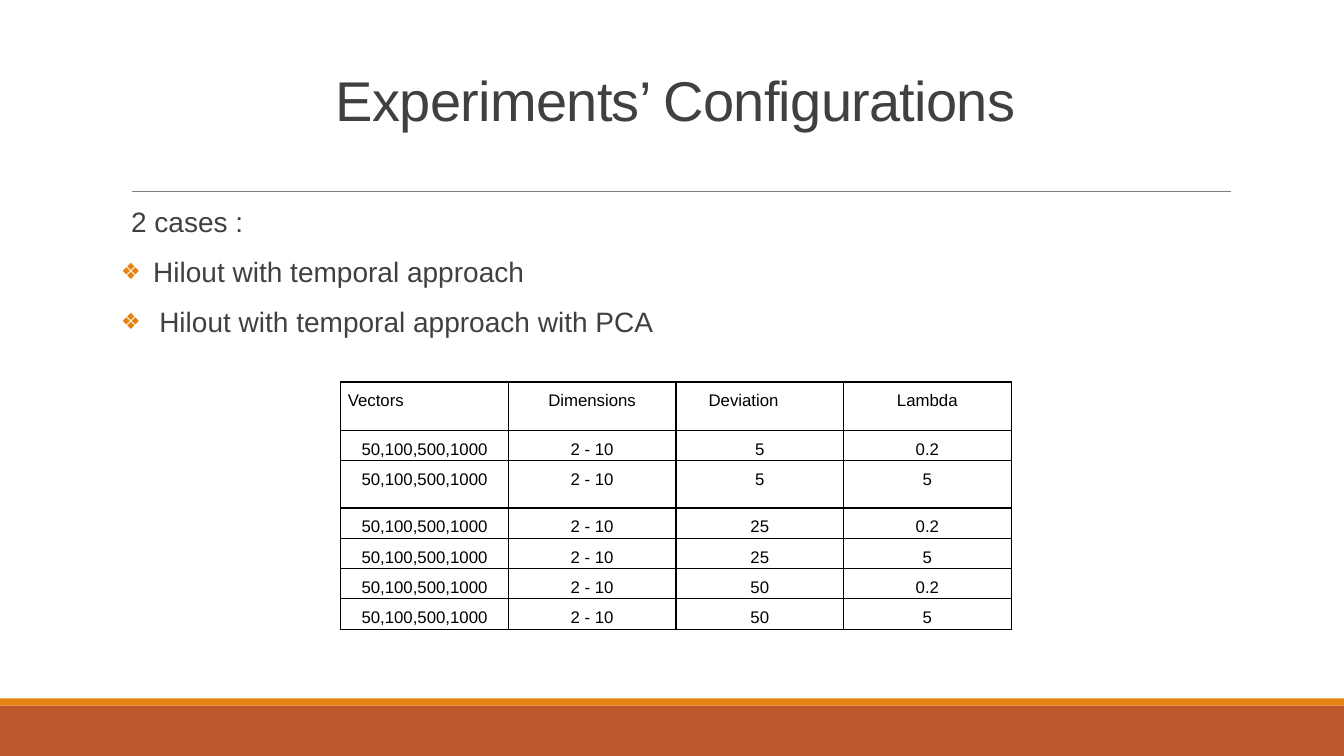
import pptx
import pptx.util
import pptx.dml.color
import pptx.enum.shapes
import pptx.enum.text
import pptx.oxml.ns
from lxml import etree

Inches = pptx.util.Inches
Pt = pptx.util.Pt
ALIGN = pptx.enum.text.PP_ALIGN

HEADS = ["Vectors", "Dimensions", "Deviation", "Lambda"]
CASES = [(dev, lam) for dev in ("5", "25", "50") for lam in ("0.2", "5")]
ROWS = [HEADS] + [["50,100,500,1000", "2 - 10", *case] for case in CASES]
HEIGHTS = [0.48, 0.23, 0.47, 0.23, 0.23, 0.23, 0.23]


def color(code):
    return pptx.dml.color.RGBColor.from_string(code)


def add_node(parent, tag, **attrs):
    node = etree.SubElement(parent, pptx.oxml.ns.qn(tag))
    for name, value in attrs.items():
        node.set(name, value)
    return node


def add_band(slide, top, height, fill):
    band = slide.shapes.add_shape(
        pptx.enum.shapes.MSO_SHAPE.RECTANGLE,
        0, Inches(top), Inches(13.33), Inches(height))
    band.shadow.inherit = False
    band.fill.solid()
    band.fill.fore_color.rgb = color(fill)
    band.line.fill.background()


def add_rule(slide, left, right, top):
    rule = slide.shapes.add_connector(
        pptx.enum.shapes.MSO_CONNECTOR.STRAIGHT,
        Inches(left), Inches(top), Inches(right), Inches(top))
    rule.line.color.rgb = color("808080")
    rule.line.width = Pt(0.5)
    add_node(rule._element.spPr, "a:effectLst")


def add_frame(slide, top, height):
    box = slide.shapes.add_textbox(
        Inches(1.2), Inches(top), Inches(11), Inches(height))
    box.text_frame.word_wrap = True
    return box.text_frame


def style_text(para, size, fill, spacing):
    para.line_spacing = spacing
    for run in para.runs:
        run.font.name = "Arial"
        run.font.size = Pt(size)
        run.font.color.rgb = color(fill)


def add_title(slide, text):
    frame = add_frame(slide, 0.31, 1.06)
    frame.vertical_anchor = pptx.enum.text.MSO_ANCHOR.BOTTOM
    frame.text = text
    para = frame.paragraphs[0]
    para.alignment = ALIGN.CENTER
    style_text(para, 40, "404040", 0.85)
    para.runs[0].font._element.set("spc", "-50")


def set_bullet(para, indent):
    """Hang a diamond bullet to the left of the text."""
    props = para._p.get_or_add_pPr()
    props.set("marL", str(Inches(indent)))
    props.set("indent", str(-Inches(indent)))
    tint = add_node(props, "a:buClr")
    add_node(tint, "a:srgbClr", val="E48312")
    add_node(props, "a:buSzPct", val="80000")
    add_node(props, "a:buFont", typeface="Arial")
    add_node(props, "a:buChar", char="❖")


def add_body(slide, lines):
    """Add (text, indent, bulleted) lines."""
    frame = add_frame(slide, 2.02, 4.4)
    frame.margin_left = frame.margin_right = 0
    frame.text = "\n".join(line[0] for line in lines)
    for para, (_, indent, marked) in zip(frame.paragraphs, lines):
        style_text(para, 20, "404040", 0.9)
        para.space_before = Pt(12)
        para.space_after = Pt(2)
        if marked:
            set_bullet(para, indent)
        else:
            para._p.get_or_add_pPr().set("marL", str(Inches(indent)))


def set_border(cell):
    props = cell._tc.get_or_add_tcPr()
    for side in ("L", "R", "T", "B"):
        line = add_node(props, f"a:ln{side}", w=str(Pt(1)))
        fill = add_node(line, "a:solidFill")
        add_node(fill, "a:srgbClr", val="000000")


def set_cell(cell, text):
    cell.text = text
    cell.margin_left = cell.margin_right = Inches(0.07)
    cell.margin_top = cell.margin_bottom = 0
    set_border(cell)
    cell.fill.background()
    para = cell.text_frame.paragraphs[0]
    para.alignment = ALIGN.CENTER
    para.space_before = para.space_after = Pt(6)
    style_text(para, 12, "000000", 1.5)


def add_grid(slide):
    grid = slide.shapes.add_table(
        len(ROWS), len(HEADS), Inches(3.38), Inches(3.79),
        Inches(6.65), Inches(sum(HEIGHTS))).table
    grid.first_row = grid.horz_banding = False
    for row, height, texts in zip(grid.rows, HEIGHTS, ROWS):
        row.height = Inches(height)
        for cell, text in zip(row.cells, texts):
            set_cell(cell, text)
    grid.cell(0, 0).text_frame.paragraphs[0].alignment = ALIGN.LEFT
    grid.cell(0, 2).margin_right = Inches(0.39)


def main():
    deck = pptx.Presentation()
    deck.slide_width = Inches(13.33)
    deck.slide_height = Inches(7.5)
    slide = deck.slides.add_slide(deck.slide_layouts[6])
    add_band(slide, 7, 0.5, "BD582C")
    add_band(slide, 6.93, 0.07, "E48312")
    add_rule(slide, 1.31, 12.21, 1.9)
    add_title(slide, "Experiments’ Configurations")
    add_body(slide, [
        ("2 cases :", 0.1, False),
        ("Hilout with temporal approach", 0.32, True),
        ("Hilout with temporal approach with PCA", 0.38, True),
    ])
    add_grid(slide)
    deck.save("out.pptx")


if __name__ == "__main__":
    main()
